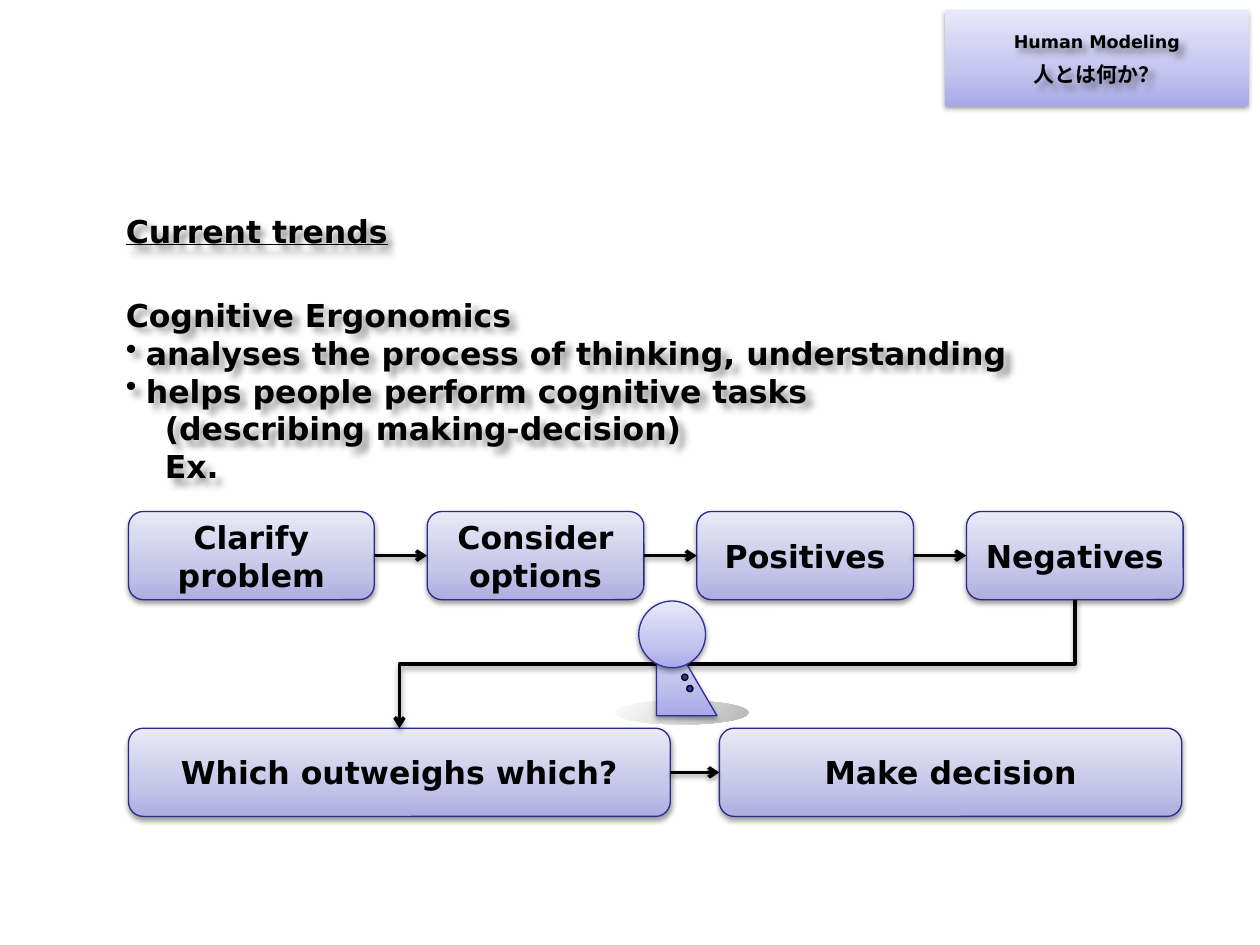
from pptx import Presentation
from pptx import util as u
from pptx.dml import color
from pptx.enum import shapes, text
from pptx.oxml import parse_xml
from pptx.oxml import ns

FONT = "DejaVu Sans"
BLACK = "000000"
PALE = [(0, "A9A9E9"), (35, "C4C4EF"), (100, "E8E8FA")]
SOFT = [(0, "ADADE1"), (35, "C6C6E9"), (100, "E9E9F7")]
GREY = [(0, "FFFFFF"), (100, "B6B6B6")]
KIND = shapes.MSO_SHAPE


def rgb(code):
    """Return the colour for a hex string."""
    return color.RGBColor.from_string(code)


def shade(item, blur=3.1, dist=1.6, turn=90):
    """Give an item a soft shadow."""
    item._element.spPr.append(parse_xml(
        f'<a:effectLst {ns.nsdecls("a")}><a:outerShdw blurRad="{u.Pt(blur)}" '
        f'dist="{u.Pt(dist)}" dir="{turn * 60000}" algn="ctr" rotWithShape="0">'
        f'<a:srgbClr val="{BLACK}"><a:alpha val="38000"/></a:srgbClr>'
        f'</a:outerShdw></a:effectLst>'))


def blend(item, stops, turn):
    """Fill a shape with a linear gradient."""
    marks = "".join(f'<a:gs pos="{pos * 1000}"><a:srgbClr val="{code}"/></a:gs>'
                    for pos, code in stops)
    item._element.spPr.find(ns.qn("a:prstGeom")).addnext(parse_xml(
        f'<a:gradFill {ns.nsdecls("a")} rotWithShape="1"><a:gsLst>{marks}</a:gsLst>'
        f'<a:lin ang="{turn * 60000}" scaled="0"/></a:gradFill>'))


def style(para, size, align=None):
    """Set the type of a paragraph."""
    para.alignment = align
    for run in para.runs:
        run.font.name, run.font.size, run.font.bold = FONT, u.Pt(size), True
        run.font.color.rgb = rgb(BLACK)


def shape(slide, kind, x, y, w, h, fill, line=None, turn=270, cast=True):
    """Add a filled shape, with an outline and a shadow if asked."""
    item = slide.shapes.add_shape(kind, *map(u.Inches, (x, y, w, h)))
    if isinstance(fill, str):
        item.fill.solid()
        item.fill.fore_color.rgb = rgb(fill)
    else:
        blend(item, fill, turn)
    if line:
        item.line.color.rgb = rgb(line)
        item.line.width = u.Pt(0.75)
    else:
        item.line.fill.background()
    if cast:
        shade(item)
    else:
        item.shadow.inherit = False
    return item


def words(slide, x, y, w, h, lines, size, align=None):
    """Add a text box and return its paragraphs."""
    box = slide.shapes.add_textbox(*map(u.Inches, (x, y, w, h)))
    shade(box, 4, 4, 45)
    frame = box.text_frame
    frame.word_wrap = True
    frame.text = "\n".join(lines)
    for para in frame.paragraphs:
        style(para, size, align)
    return frame.paragraphs


def badge(slide, x, y, w, h):
    """Draw the topic badge."""
    mid = text.PP_ALIGN.CENTER
    shape(slide, KIND.RECTANGLE, x, y, w, h, PALE)
    words(slide, x, y + 0.12, w, 0.27, ["Human Modeling"], 10, mid)
    words(slide, x, y + 0.4, w, 0.26, ["人とは何か？"], 12, mid)[0].line_spacing = 0.8


def body(slide, x, y, w):
    """Write the heading and the points."""
    head = words(slide, x, y, w, 0.4, ["Current trends"], 18)[0]
    head.runs[0].font.underline = True
    paras = words(slide, x, y + 0.67, w, 1.62, [
        "Cognitive Ergonomics",
        "analyses the process of thinking, understanding",
        "helps people perform cognitive tasks",
        "(describing making-decision)",
        "Ex."], 18)
    for para in paras[1:3]:
        props = para._p.get_or_add_pPr()
        props.set("marL", str(u.Inches(0.16)))
        props.set("indent", str(u.Inches(-0.16)))
        props.append(parse_xml(f'<a:buChar {ns.nsdecls("a")} char="•"/>'))
    for para in paras[3:]:
        para._p.get_or_add_pPr().set("marL", str(u.Inches(0.31)))


def link(slide, kind, start, out, end, into):
    """Join two steps with an arrow."""
    wire = slide.shapes.add_connector(kind, 0, 0, 0, 0)
    wire.begin_connect(start, out)
    wire.end_connect(end, into)
    wire.line.color.rgb = rgb(BLACK)
    wire.line.width = u.Pt(2)
    wire.line._get_or_add_ln().append(
        parse_xml(f'<a:tailEnd {ns.nsdecls("a")} type="arrow"/>'))
    shade(wire)
    return wire


def row(slide, x, y, h, gap, steps):
    """Draw a row of steps joined by arrows."""
    made = []
    for label, w in steps:
        box = shape(slide, KIND.ROUNDED_RECTANGLE, x, y, w, h, SOFT, "2A2A89")
        box.text_frame.text = label
        box.text_frame.vertical_anchor = text.MSO_ANCHOR.MIDDLE
        style(box.text_frame.paragraphs[0], 18, text.PP_ALIGN.CENTER)
        if made:
            link(slide, shapes.MSO_CONNECTOR.STRAIGHT, made[-1], 3, box, 1)
        made.append(box)
        x += w + gap
    return made


def drop(slide, start, end):
    """Run a bent arrow from the bottom of one step to the top of another."""
    wire = link(slide, shapes.MSO_CONNECTOR.ELBOW, start, 2, end, 0)
    x, y, w, h = wire.left, wire.top, wire.width, wire.height
    frame = wire._element.spPr.find(ns.qn("a:xfrm"))
    frame.attrib.clear()
    frame.set("rot", "5400000")
    wire.left, wire.top = x + (w - h) // 2, y + (h - w) // 2
    wire.width, wire.height = h, w


def flow(slide, x, y):
    """Draw the decision process."""
    top = row(slide, x, y, 0.7, 0.42, [
        ("Clarify problem", 1.95), ("Consider options", 1.72),
        ("Positives", 1.72), ("Negatives", 1.72)])
    low = row(slide, x, y + 1.72, 0.7, 0.39, [
        ("Which outweighs which?", 4.3), ("Make decision", 3.67)])
    drop(slide, top[-1], low[0])


def person(slide, x, y):
    """Draw the thinking figure."""
    shape(slide, KIND.OVAL, x, y + 0.79, 1.06, 0.19, GREY, turn=45, cast=False)
    shape(slide, KIND.RIGHT_TRIANGLE, x + 0.33, y + 0.09, 0.48, 0.82, PALE, "2F2F98")
    shape(slide, KIND.OVAL, x + 0.19, y, 0.53, 0.53, PALE, "2F2F98")
    for dx, dy in ((0.53, 0.58), (0.57, 0.67)):
        shape(slide, KIND.OVAL, x + dx, y + dy, 0.05, 0.05, "333399", BLACK, cast=False)


def main():
    """Build the slide and save it."""
    deck = Presentation()
    deck.slide_width, deck.slide_height = u.Inches(10), u.Inches(7.5)
    slide = deck.slides.add_slide(deck.slide_layouts[6])
    badge(slide, 7.5, 0.08, 2.41, 0.76)
    body(slide, 0.9, 1.63, 7.77)
    flow(slide, 1.02, 4.06)
    person(slide, 4.88, 4.77)
    deck.save("out.pptx")


if __name__ == "__main__":
    main()
